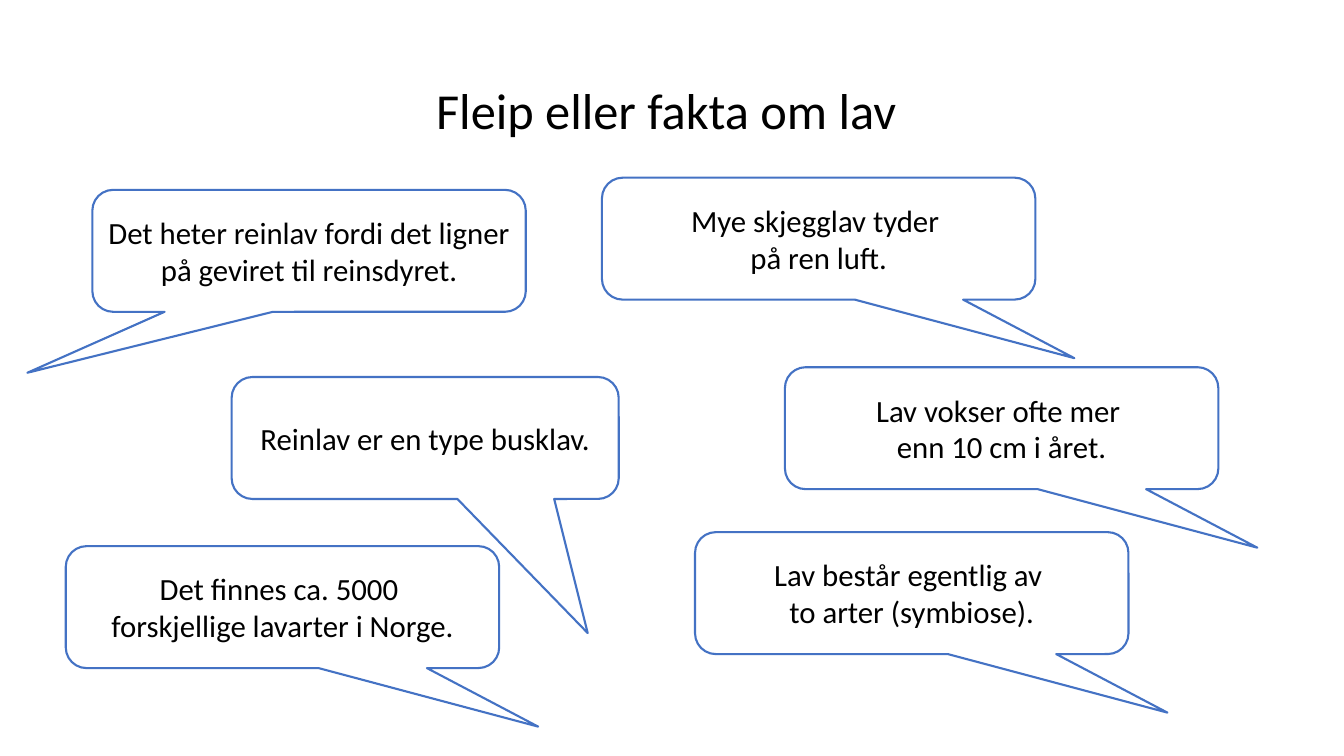
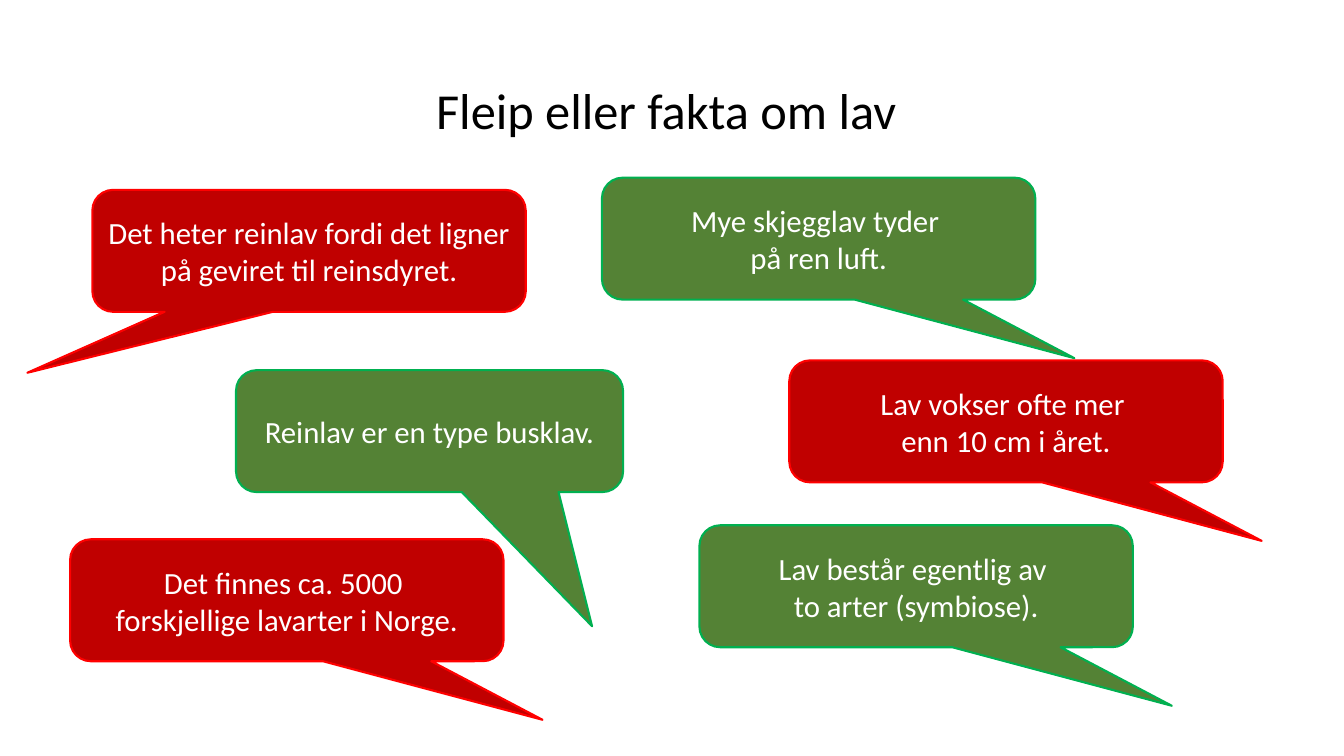
from pptx import Presentation
from pptx.dml.color import RGBColor
from pptx.enum.shapes import MSO_SHAPE
from pptx.enum.text import MSO_ANCHOR, PP_ALIGN
from pptx.util import Pt

BLACK = RGBColor(0x00, 0x00, 0x00)
WHITE = RGBColor(0xFF, 0xFF, 0xFF)
BLUE = RGBColor(0x44, 0x72, 0xC4)
DARK_RED = RGBColor(0xC0, 0x00, 0x00)
RED = RGBColor(0xFF, 0x00, 0x00)
DARK_GREEN = RGBColor(0x54, 0x82, 0x35)
GREEN = RGBColor(0x00, 0xB0, 0x50)

TITLE = "Fleip eller fakta om lav "
TITLE_PLACE = {"left": 66, "top": 28.8, "width": 828, "height": 104.4}
WIDE, NARROW, BOX_HEIGHT = 309.6, 276.5, 87.1
TAIL_RIGHT = (0.59, 0.98, 0.17)
TAIL_LEFT = (-0.65, 1, 0.17)
TAIL_DOWN = (0.42, 1.6, 0.17)
STAY, MOVE = (0, 0), (3.1, -4.9)

QUESTION = (WHITE, BLUE, BLACK)
FALSE_ANSWER = (DARK_RED, RED, WHITE)
TRUE_ANSWER = (DARK_GREEN, GREEN, WHITE)

CLAIMS = [
    ("Det finnes ca. 5000 \vforskjellige lavarter i Norge.",
     47, 390.1, WIDE, TAIL_RIGHT, MOVE, FALSE_ANSWER),
    ("Reinlav er en type busklav.",
     165.5, 269.3, NARROW, TAIL_DOWN, MOVE, TRUE_ANSWER),
    ("Det heter reinlav fordi det ligner på geviret til reinsdyret.",
     66, 135.6, WIDE, TAIL_LEFT, STAY, FALSE_ANSWER),
    ("Lav består egentlig av \vto arter (symbiose).",
     496.5, 380.1, WIDE, TAIL_RIGHT, MOVE, TRUE_ANSWER),
    ("Mye skjegglav tyder \vpå ren luft.",
     430, 126.9, WIDE, TAIL_RIGHT, STAY, TRUE_ANSWER),
    ("Lav vokser ofte mer \venn 10 cm i året.",
     560.7, 262.3, WIDE, TAIL_RIGHT, MOVE, FALSE_ANSWER),
]


def write_text(box, text, size, color, line_spacing):
    frame = box.text_frame
    frame.text = text
    frame.word_wrap = True
    frame.vertical_anchor = MSO_ANCHOR.MIDDLE
    para = frame.paragraphs[0]
    para.alignment = PP_ALIGN.CENTER
    para.line_spacing = line_spacing
    for span in para.runs:
        for name, value in {"name": "Calibri", "size": Pt(size)}.items():
            setattr(span.font, name, value)
        span.font.color.rgb = color


deck = Presentation()
deck.slide_width, deck.slide_height = Pt(960), Pt(540)
layout = deck.slide_layouts.get_by_name("Title Only")
for name, value in TITLE_PLACE.items():
    setattr(layout.placeholders[0], name, Pt(value))

for answered in (False, True):
    page = deck.slides.add_slide(layout)
    write_text(page.shapes.title, TITLE, 36, BLACK, 0.9)
    for text, left, top, width, tail, shift, answer in CLAIMS:
        shift_x, shift_y = shift if answered else STAY
        fill, line, ink = answer if answered else QUESTION
        box = page.shapes.add_shape(
            MSO_SHAPE.ROUNDED_RECTANGULAR_CALLOUT,
            Pt(left + shift_x), Pt(top + shift_y), Pt(width), Pt(BOX_HEIGHT))
        for index, value in enumerate(tail):
            box.adjustments[index] = value
        box.shadow.inherit = False
        box.fill.solid()
        box.fill.fore_color.rgb = fill
        box.line.color.rgb = line
        box.line.width = Pt(1.5)
        write_text(box, text, 22, ink, 1.0)

deck.save("out.pptx")
